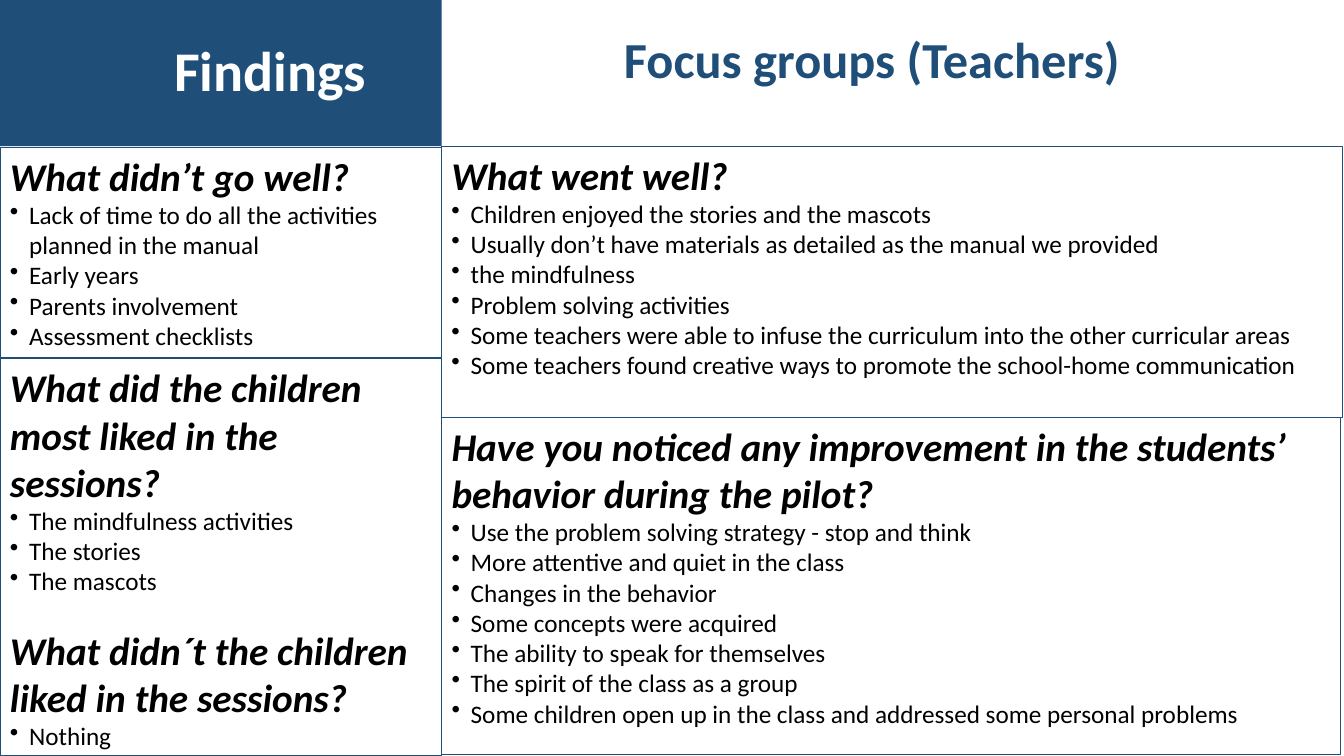
from lxml import etree
from pptx import Presentation
from pptx.dml.color import RGBColor
from pptx.enum import shapes, text
from pptx.oxml import ns
from pptx.util import Inches, Pt

NAVY = RGBColor(0x1F, 0x4E, 0x79)
WHITE = RGBColor(0xFF, 0xFF, 0xFF)
BLACK = RGBColor(0, 0, 0)
SPLIT = 4.38
BULLET_INDENT = Inches(0.19)
QUESTION = {"size": Pt(28), "bold": True, "italic": True}
ANSWER = {"size": Pt(18), "bold": False, "italic": False}
HEADING_BOLD = {"bold": True}

PANELS = [
    ((SPLIT, 1.45, 8.94, 2.69), [
        ("What went well?", [
            "Children enjoyed the stories and the mascots",
            "Usually don’t have materials as detailed as the manual we provided",
            "the mindfulness",
            "Problem solving activities",
            "Some teachers were able to infuse the curriculum into the other curricular areas",
            "Some teachers found creative ways to promote the school-home communication",
        ]),
    ]),
    ((0, 1.46, SPLIT, 2.09), [
        ("What didn’t go well?", [
            "Lack of time to do all the activities planned in the manual",
            "Early years",
            "Parents involvement",
            "Assessment checklists",
        ]),
    ]),
    ((0, 3.56, SPLIT, 3.94), [
        ("What did the children most liked in the sessions?", [
            "The mindfulness activities",
            "The stories",
            "The mascots",
        ]),
        ("What didn´t the children liked in the sessions?", ["Nothing"]),
    ]),
    ((SPLIT, 4.14, 8.92, 3.35), [
        ("Have you noticed any improvement in the students’ behavior during the pilot?", [
            "Use the problem solving strategy - stop and think",
            "More attentive and quiet in the class",
            "Changes in the behavior",
            "Some concepts were acquired",
            "The ability to speak for themselves",
            "The spirit of the class as a group",
            "Some children open up in the class and addressed some personal problems",
        ]),
    ]),
]


def write(paragraph, words, color, formats):
    run = paragraph.add_run()
    run.text = words
    run.font.name = "Calibri"
    run.font.color.rgb = color
    for name, value in formats.items():
        setattr(run.font, name, value)


def add_bullet(paragraph):
    properties = paragraph._p.get_or_add_pPr()
    properties.set("marL", str(BULLET_INDENT))
    properties.set("indent", str(-BULLET_INDENT))
    etree.SubElement(properties, ns.qn("a:buChar")).set("char", "•")


def add_text_box(slide, box):
    shape = slide.shapes.add_textbox(*map(Inches, box))
    shape.text_frame.word_wrap = True
    return shape


def add_banner(slide):
    banner = slide.shapes.add_shape(
        shapes.MSO_SHAPE.RECTANGLE, 0, 0, Inches(SPLIT), Inches(1.45))
    banner.shadow.inherit = False
    banner.fill.solid()
    banner.fill.fore_color.rgb = NAVY
    banner.line.fill.background()
    frame = banner.text_frame
    frame.margin_left = Inches(1.08)
    frame.vertical_anchor = text.MSO_ANCHOR.MIDDLE
    paragraph = frame.paragraphs[0]
    paragraph.alignment = text.PP_ALIGN.CENTER
    paragraph.line_spacing = 0.9
    write(paragraph, "Findings", WHITE, HEADING_BOLD | {"size": Pt(40)})


def add_subtitle(slide):
    subtitle = add_text_box(slide, (6.09, 0.23, 5.72, 0.71))
    write(subtitle.text_frame.paragraphs[0], "Focus groups (Teachers)", NAVY,
          HEADING_BOLD | {"size": Pt(36)})


def add_panel(slide, box, sections):
    panel = add_text_box(slide, box)
    panel.line.color.rgb = NAVY
    panel.line.width = Pt(0.75)
    frame = panel.text_frame
    for index, (question, answers) in enumerate(sections):
        paragraph = frame.add_paragraph() if index else frame.paragraphs[0]
        if index:
            paragraph.space_before = Pt(22)
        write(paragraph, question, BLACK, QUESTION)
        for answer in answers:
            paragraph = frame.add_paragraph()
            add_bullet(paragraph)
            write(paragraph, answer, BLACK, ANSWER)


def main():
    presentation = Presentation()
    presentation.slide_width = Inches(13.33)
    presentation.slide_height = Inches(7.5)
    slide = presentation.slides.add_slide(presentation.slide_layouts[6])
    add_banner(slide)
    add_subtitle(slide)
    for box, sections in PANELS:
        add_panel(slide, box, sections)
    presentation.save("out.pptx")


if __name__ == "__main__":
    main()
